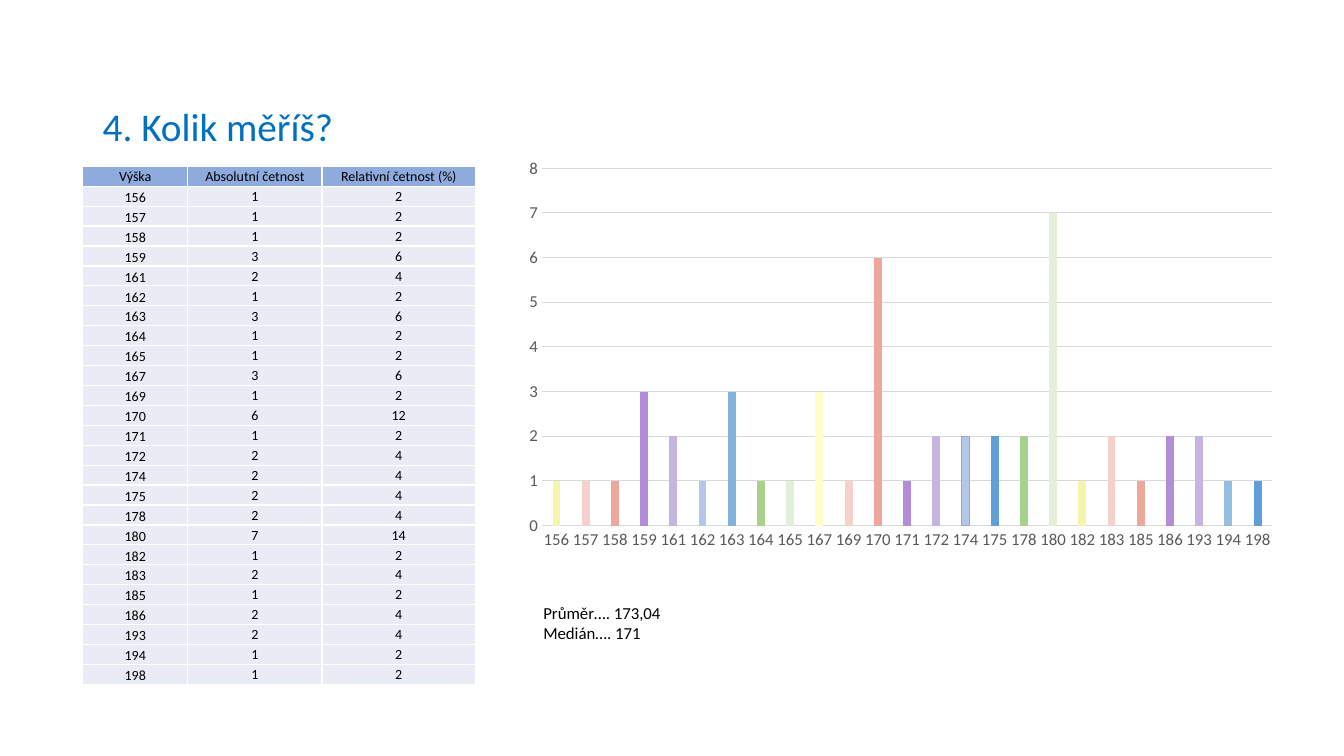
from itertools import cycle

from lxml.etree import SubElement
from pptx import Presentation
from pptx.chart.data import CategoryChartData
from pptx.dml.color import RGBColor
from pptx.enum.chart import XL_CHART_TYPE as ChartType, XL_TICK_MARK as TickMark
from pptx.enum.text import MSO_ANCHOR as Anchor, PP_ALIGN as Align
from pptx.oxml import parse_xml
from pptx.oxml.ns import nsdecls, qn
from pptx.util import Inches, Pt

FONT = "Calibri"
GRID_COLUMNS, GRID_ROWS = 32, 18
WIDTH, HEIGHT = Inches(13.33), Inches(7.5)

HEADINGS = ["Výška", "Absolutní četnost", "Relativní četnost (%)"]
COUNTS = {
    156: 1, 157: 1, 158: 1, 159: 3, 161: 2, 162: 1, 163: 3, 164: 1, 165: 1,
    167: 3, 169: 1, 170: 6, 171: 1, 172: 2, 174: 2, 175: 2, 178: 2, 180: 7,
    182: 1, 183: 2, 185: 1, 186: 2, 193: 2, 194: 1, 198: 1,
}
BAR_COLOURS = ["F5F5AD", "F5D1CB", "EDA89D", "B28CD8", "C6B5E1",
               "B4C7E7", "609ED6", "A9D18E", "E2F0D9"]
SPECIAL_BARS = {163: "82B2DE", 167: "FFFFC9", 194: "95BEE3"}
OUTLINED_HEIGHT = 174


def colour(code):
    return RGBColor.from_string(code)


def across(columns):
    return round(WIDTH * columns / GRID_COLUMNS)


def down(rows):
    return round(HEIGHT * rows / GRID_ROWS)


def area(left, top, width, height):
    return across(left), down(top), across(width), down(height)


def style_font(font, size, code):
    font.name, font.size = FONT, Pt(size)
    font.color.rgb = colour(code)


def add_text(page, place, lines, size, code, wrap=True, spacing=None):
    box = page.shapes.add_textbox(*area(*place))
    frame = box.text_frame
    frame.word_wrap = wrap
    frame.vertical_anchor = Anchor.MIDDLE
    frame.text = "\n".join(lines)
    for para in frame.paragraphs:
        para.line_spacing = spacing
        style_font(para.font, size, code)


def add_borders(cell, code, points):
    properties = cell._tc.get_or_add_tcPr()
    for index, side in enumerate(("lnL", "lnR", "lnT", "lnB")):
        properties.insert(index, parse_xml(
            f'<a:{side} {nsdecls("a")} w="{Pt(points)}"><a:solidFill>'
            f'<a:srgbClr val="{code}"/></a:solidFill></a:{side}>'))


def fill_cell(cell, value, fill, anchor):
    cell.text = str(value)
    cell.vertical_anchor = anchor
    cell.margin_left = cell.margin_right = cell.margin_top = Inches(0.01)
    cell.margin_bottom = 0
    cell.fill.solid()
    cell.fill.fore_color.rgb = colour(fill)
    para = cell.text_frame.paragraphs[0]
    para.alignment = Align.CENTER
    style_font(para.font, 10, "000000")
    add_borders(cell, "FFFFFF", 1)


def add_frequency_table(page, left, top, widths, height):
    total = sum(COUNTS.values())
    rows = [HEADINGS] + [(size, count, 100 * count // total)
                         for size, count in COUNTS.items()]
    table = page.shapes.add_table(
        len(rows), len(widths), *area(left, top, sum(widths), height)).table
    for column, width in zip(table.columns, widths):
        column.width = across(width)
    for r, values in enumerate(rows):
        table.rows[r].height = down(height / len(rows))
        for c, value in enumerate(values):
            anchor = Anchor.BOTTOM if r and c == 0 else Anchor.MIDDLE
            fill_cell(table.cell(r, c), value, "E9EBF5" if r else "8FAADC", anchor)


def set_plot_area(chart, **shares):
    """Fix the inner plot area as shares of the chart's size."""
    plot_area = chart._chartSpace.chart.plotArea
    layout = plot_area.find(qn("c:layout"))
    if layout is None:
        layout = SubElement(plot_area, qn("c:layout"))
        plot_area.insert(0, layout)
    manual = SubElement(layout, qn("c:manualLayout"))
    settings = {"layoutTarget": "inner", "xMode": "edge", "yMode": "edge", **shares}
    for name, value in settings.items():
        SubElement(manual, qn(f"c:{name}")).set("val", str(value))


def style_axis(axis):
    axis.major_tick_mark = axis.minor_tick_mark = TickMark.NONE
    style_font(axis.tick_labels.font, 12, "595959")


def style_line(line, code, points):
    line.color.rgb = colour(code)
    line.width = Pt(points)


def add_height_chart(page, place):
    data = CategoryChartData()
    data.categories = [str(size) for size in COUNTS]
    data.add_series("Absolutní četnost", COUNTS.values())
    chart = page.shapes.add_chart(
        ChartType.COLUMN_CLUSTERED, *area(*place), data).chart
    chart.has_legend = chart.has_title = False
    style_font(chart.font, 10, "000000")
    set_plot_area(chart, x=0.06, y=0.02, w=0.93, h=0.87)

    heights, counts = chart.category_axis, chart.value_axis
    style_axis(heights)
    style_axis(counts)
    style_line(heights.format.line, "D9D9D9", 0.75)
    counts.format.line.fill.background()
    counts.minimum_scale, counts.maximum_scale, counts.major_unit = 0, 8, 1
    style_line(counts.major_gridlines.format.line, "D9D9D9", 0.75)

    plot = chart.plots[0]
    plot.gap_width, plot.overlap, plot.vary_by_categories = 271, -1, False
    series = plot.series[0]
    for index, (size, code) in enumerate(zip(COUNTS, cycle(BAR_COLOURS))):
        bar = series.points[index].format
        bar.fill.solid()
        bar.fill.fore_color.rgb = colour(SPECIAL_BARS.get(size, code))
        if size == OUTLINED_HEIGHT:
            style_line(bar.line, "8FAADC", 0.75)


def main():
    deck = Presentation()
    deck.slide_width, deck.slide_height = WIDTH, HEIGHT
    page = deck.slides.add_slide(deck.slide_layouts[6])
    add_text(page, (2.21, 1.32, 27.6, 3.48), ["4. Kolik měříš?"], 28, "0070C0",
             spacing=0.9)
    add_frequency_table(page, 1.97, 3.96, [2.5, 3.2, 3.65], 12.34)
    add_height_chart(page, (11.78, 3.77, 18.7, 9.82))
    add_text(page, (12.7, 14.23, 3.31, 1.2),
             ["Průměr…. 173,04", "Medián…. 171"], 12, "000000", wrap=False)
    deck.save("out.pptx")


if __name__ == "__main__":
    main()
